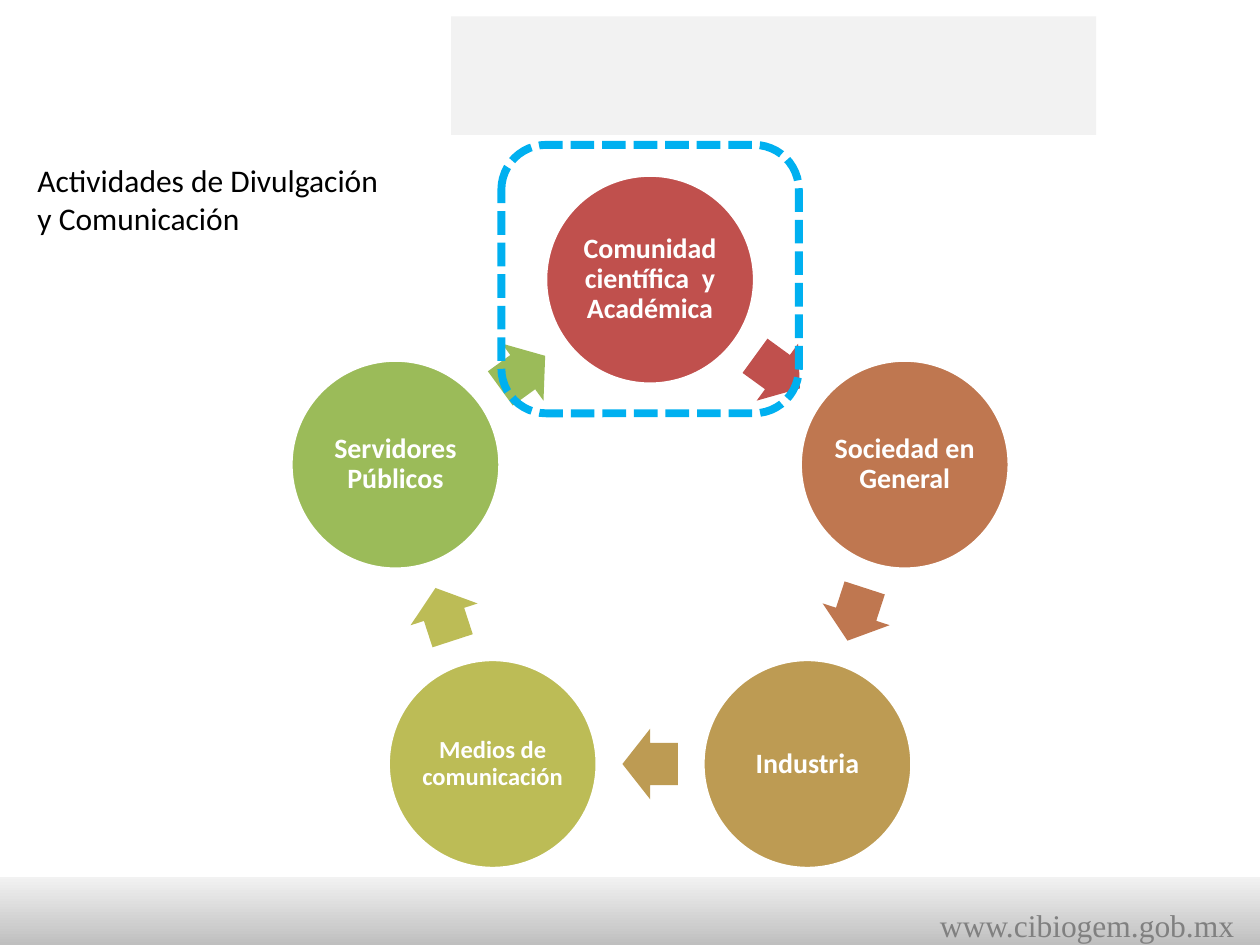
"""Build the slide on the audiences of outreach activities."""
from dataclasses import dataclass
from math import cos, pi, sin

from pptx import Presentation
from pptx.dml.color import RGBColor as Rgb
from pptx.enum.dml import MSO_LINE as Dash
from pptx.enum.shapes import MSO_SHAPE as Kind
from pptx.enum.text import MSO_ANCHOR as Anchor, MSO_AUTO_SIZE as Fit, PP_ALIGN as Align
from pptx.shapes.autoshape import Shape
from pptx.slide import Slide
from pptx.util import Pt

HUES = {
    "white": "FFFFFF", "black": "000000", "pale": "F2F2F2", "silver": "BFBFBF",
    "gray": "808080", "blue": "00B0F0", "red": "C0504D", "rust": "BF7750",
    "tan": "BD9B53", "olive": "BCBC56", "green": "9BBB59",
}
MID_X, MID_Y, RADIUS = 371.5, 312.8, 153
DISC = 119.5
ARROW_W, ARROW_H = 31.7, 40.3


@dataclass
class Node:
    """A group of people in the cycle."""
    text: str
    hue: str
    size: int = 16


NODES = [
    Node("Comunidad científica  y Académica", "red"),
    Node("Sociedad en General", "rust"),
    Node("Industria", "tan"),
    Node("Medios de comunicación", "olive", 14),
    Node("Servidores Públicos", "green"),
]


def tint(name: str) -> Rgb:
    """Return a named colour."""
    return Rgb.from_string(HUES[name])


def style(para, font: str, size: int, hue: str, bold: bool = False) -> None:
    """Set the font of a paragraph."""
    para.font.name, para.font.size, para.font.bold = font, Pt(size), bold
    para.font.color.rgb = tint(hue)


def add_form(slide: Slide, kind: Kind, x: float, y: float, w: float, h: float,
             hue: str = "") -> Shape:
    """Add a flat shape with no line, filled if a colour is given."""
    form = slide.shapes.add_shape(kind, Pt(x), Pt(y), Pt(w), Pt(h))
    form.shadow.inherit = False
    form.line.fill.background()
    if hue:
        form.fill.solid()
        form.fill.fore_color.rgb = tint(hue)
    else:
        form.fill.background()
    return form


def spot(step: float, reach: float) -> tuple[float, float]:
    """Return the point at a step round the cycle, clockwise from the top."""
    turn = 2 * pi * step / len(NODES)
    return MID_X + reach * sin(turn), MID_Y - reach * cos(turn)


def add_disc(slide: Slide, node: Node, step: int) -> None:
    """Add the circle of a node with its text."""
    x, y = spot(step, RADIUS)
    disc = add_form(slide, Kind.OVAL, x - DISC / 2, y - DISC / 2, DISC, DISC, node.hue)
    disc.line.color.rgb = tint("white")
    disc.line.width = Pt(2)
    frame = disc.text_frame
    frame.word_wrap = True
    frame.vertical_anchor = Anchor.MIDDLE
    frame.margin_left = frame.margin_right = Pt(1.5)
    frame.margin_top = frame.margin_bottom = Pt(1.5)
    para = frame.paragraphs[0]
    para.text, para.alignment, para.line_spacing = node.text, Align.CENTER, 0.9
    style(para, "Calibri", node.size, "white", True)


def add_arrow(slide: Slide, node: Node, step: int) -> None:
    """Add the arrow from a node to the next one."""
    x, y = spot(step + 0.5, RADIUS * cos(pi / len(NODES)))
    arrow = add_form(slide, Kind.RIGHT_ARROW, x - ARROW_W / 2, y - ARROW_H / 2,
                     ARROW_W, ARROW_H, node.hue)
    arrow.adjustments[0], arrow.adjustments[1] = 0.6, 0.5
    arrow.rotation = (step + 0.5) * 360 / len(NODES)


def add_base(slide: Slide) -> None:
    """Add the header block, the footer band and the web address."""
    add_form(slide, Kind.RECTANGLE, 257.8, 9.4, 368.6, 67.7, "pale")
    band = add_form(slide, Kind.RECTANGLE, 0, 501, 720, 39)
    band.fill.gradient()
    band.fill.gradient_angle = 270
    for stop, hue in zip(band.fill.gradient_stops, ("pale", "silver")):
        stop.color.rgb = tint(hue)
    box = slide.shapes.add_textbox(Pt(530), Pt(514), Pt(185.6), Pt(29))
    box.text_frame.word_wrap = False
    para = box.text_frame.paragraphs[0]
    para.text = "www.cibiogem.gob.mx"
    style(para, "Times New Roman", 18, "gray")


def set_title(slide: Slide) -> None:
    """Place and fill the title."""
    title = slide.shapes.title
    title.left, title.top, title.width, title.height = Pt(14.2), Pt(88.6), Pt(227), Pt(51)
    frame = title.text_frame
    frame.text = "Actividades de Divulgación\ny Comunicación"
    frame.word_wrap, frame.auto_size = True, Fit.NONE
    frame.vertical_anchor = Anchor.TOP
    for para in frame.paragraphs:
        para.alignment = Align.LEFT
        style(para, "Calibri", 18, "black")


def add_frame(slide: Slide) -> None:
    """Add the dashed frame round the first node."""
    frame = add_form(slide, Kind.ROUNDED_RECTANGLE, 286.5, 82.8, 170, 153.4)
    frame.line.color.rgb = tint("blue")
    frame.line.width = Pt(4.5)
    frame.line.dash_style = Dash.SQUARE_DOT


def main() -> None:
    """Build and save the slide."""
    deck = Presentation()
    deck.slide_width, deck.slide_height = Pt(720), Pt(540)
    slide = deck.slides.add_slide(deck.slide_layouts[5])
    add_base(slide)
    set_title(slide)
    for step, node in enumerate(NODES):
        add_disc(slide, node, step)
        add_arrow(slide, node, step)
    add_frame(slide)
    deck.save("out.pptx")


if __name__ == "__main__":
    main()
